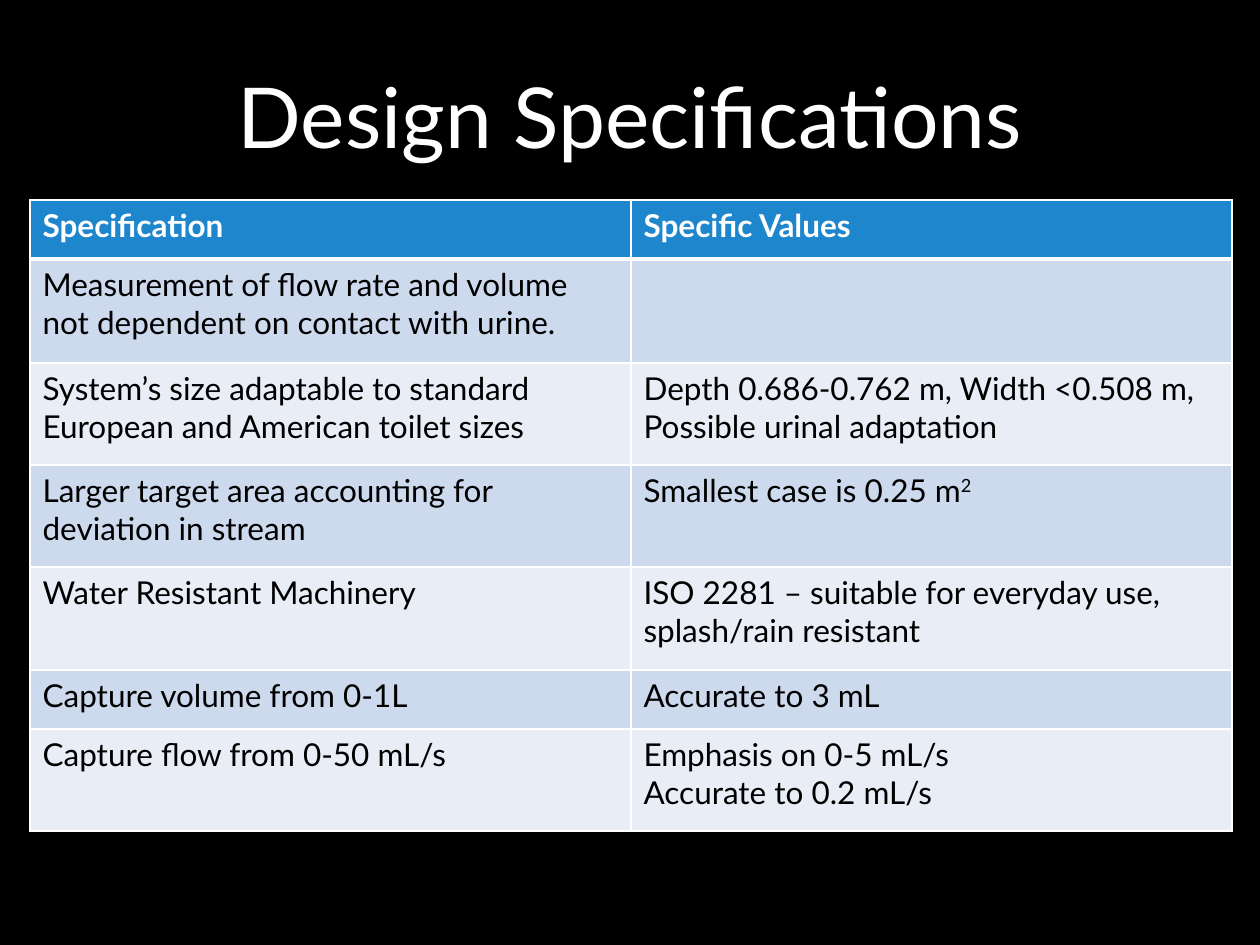
"""Build the Design Specifications slide with its specification table."""
from lxml.etree import SubElement
from pptx import Presentation
from pptx.dml.color import RGBColor
from pptx.enum.text import MSO_ANCHOR, PP_ALIGN
from pptx.oxml.ns import qn
from pptx.util import Emu, Pt

BLACK = RGBColor(0x00, 0x00, 0x00)
WHITE = RGBColor(0xFF, 0xFF, 0xFF)
HEADER_BLUE = RGBColor(0x1D, 0x86, 0xCD)
BANDS = [RGBColor(0xCD, 0xD9, 0xED), RGBColor(0xE8, 0xED, 0xF6)]
FONT = "Lato"
SUPERSCRIPT = "30000"

TITLE = "Design Specifications"
# Each cell lists paragraphs; each paragraph lists (text, baseline) runs.
SPECIFICATIONS = [
    ("Specification", ["Specific Values"]),
    ("Measurement of flow rate and volume not dependent on contact with urine.", []),
    ("System’s size adaptable to standard European and American toilet sizes",
     ["Depth 0.686-0.762 m, Width <0.508 m, Possible urinal adaptation"]),
    ("Larger target area accounting for deviation in stream",
     [("Smallest case is 0.25 m", "2")]),
    ("Water Resistant Machinery",
     ["ISO 2281 – suitable for everyday use, splash/rain resistant"]),
    ("Capture volume from 0-1L", ["Accurate to 3 mL"]),
    ("Capture flow from 0-50 mL/s",
     ["Emphasis on 0-5 mL/s", "Accurate to 0.2 mL/s"]),
]

SLIDE_SIZE = (1260, 945)
TITLE_BOX = (94, 16, 1072, 197)
TABLE_LEFT, TABLE_TOP, COLUMN_WIDTH = 30, 200, 601
ROW_HEIGHTS = [59, 104, 102, 102, 103, 59, 102]


def px(length):
    return Emu(round(length * 914400 / 126))


def add_run(paragraph, text, size, color, bold=False):
    run = paragraph.add_run()
    run.text = text
    font = run.font
    font.name, font.size, font.bold = FONT, Pt(size), bold
    font.color.rgb = color
    return run


def add_title(slide):
    frame = slide.shapes.add_textbox(*map(px, TITLE_BOX)).text_frame
    frame.word_wrap = True
    frame.vertical_anchor = MSO_ANCHOR.MIDDLE
    heading = frame.paragraphs[0]
    heading.alignment = PP_ALIGN.CENTER
    add_run(heading, TITLE, 48, WHITE)


def set_borders(cell, top, bottom):
    properties = cell._tc.get_or_add_tcPr()
    for side, width in (("L", 1), ("R", 1), ("T", top), ("B", bottom)):
        border = SubElement(properties, qn(f"a:ln{side}"), w=str(Pt(width)))
        fill = SubElement(border, qn("a:solidFill"))
        SubElement(fill, qn("a:srgbClr"), val=str(WHITE))


def fill_cell(cell, paragraphs, row):
    header = row == 0
    set_borders(cell, 3 if row == 1 else 1, 3 if header else 1)
    cell.fill.solid()
    cell.fill.fore_color.rgb = HEADER_BLUE if header else BANDS[(row - 1) % 2]
    frame = cell.text_frame
    for index, content in enumerate(paragraphs):
        paragraph = frame.add_paragraph() if index else frame.paragraphs[0]
        text, *raised = (content,) if isinstance(content, str) else content
        color = WHITE if header else BLACK
        add_run(paragraph, text, 18, color, header)
        for exponent in raised:
            run = add_run(paragraph, exponent, 18, color, header)
            run._r.get_or_add_rPr().set("baseline", SUPERSCRIPT)


def add_specifications(slide):
    table = slide.shapes.add_table(
        len(SPECIFICATIONS), 2, px(TABLE_LEFT), px(TABLE_TOP),
        px(2 * COLUMN_WIDTH), px(sum(ROW_HEIGHTS))).table
    table.horz_banding = False
    for column in table.columns:
        column.width = px(COLUMN_WIDTH)
    for row, (specification, values) in enumerate(SPECIFICATIONS):
        table.rows[row].height = px(ROW_HEIGHTS[row])
        fill_cell(table.cell(row, 0), [specification], row)
        fill_cell(table.cell(row, 1), values, row)


def main():
    deck = Presentation()
    deck.slide_width, deck.slide_height = map(px, SLIDE_SIZE)
    slide = deck.slides.add_slide(deck.slide_layouts[6])
    slide.background.fill.solid()
    slide.background.fill.fore_color.rgb = BLACK
    add_title(slide)
    add_specifications(slide)
    deck.save("out.pptx")


if __name__ == "__main__":
    main()
